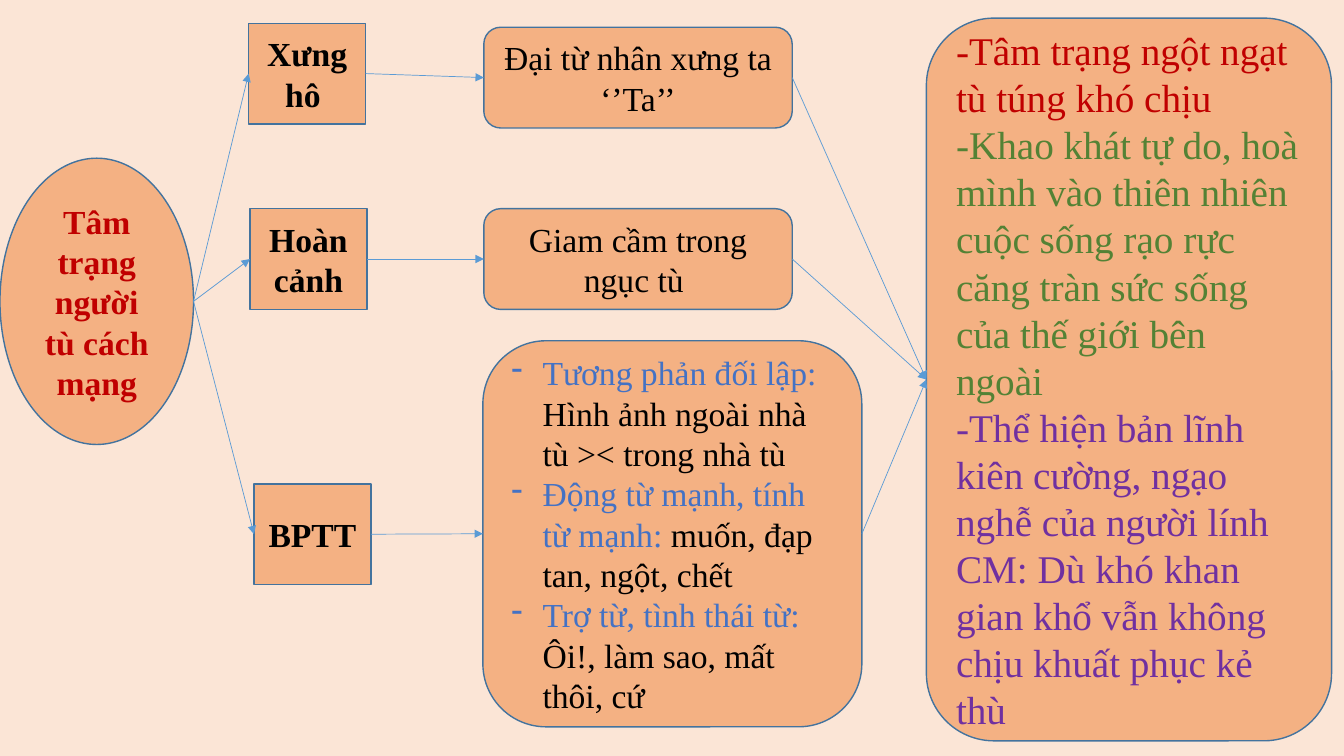
"""Build a mind-map slide on the feelings of an imprisoned revolutionary."""
from dataclasses import dataclass

from lxml.etree import SubElement
from pptx import Presentation
from pptx.dml.color import RGBColor
from pptx.enum.shapes import MSO_CONNECTOR, MSO_SHAPE
from pptx.enum.text import MSO_ANCHOR, PP_ALIGN
from pptx.oxml.ns import qn
from pptx.util import Inches, Pt

WIDTH, HEIGHT = Inches(13.33), Inches(7.5)
FONT = "Times New Roman"
INDENT = Inches(0.31)
COLORS = {
    "back": "FBE5D6", "box": "F4B183", "edge": "43739E", "arrow": "5B9BD5",
    "black": "000000", "red": "C00000", "blue": "4472C4",
    "green": "548235", "purple": "7030A0",
}

Run = tuple[str, str]


@dataclass(frozen=True)
class Node:
    """A filled box, placed in percent of the slide's width and height."""
    kind: MSO_SHAPE
    left: float
    top: float
    width: float
    height: float
    paragraphs: list[list[Run]]
    size: int = 24
    bold: bool = False
    centred: bool = True
    bullet: str = ""

    @property
    def middle(self) -> float:
        return self.top + self.height / 2

    @property
    def right(self) -> float:
        return self.left + self.width


def x(share: float) -> int:
    return round(WIDTH * share / 100)


def y(share: float) -> int:
    return round(HEIGHT * share / 100)


def rgb(name: str) -> RGBColor:
    return RGBColor.from_string(COLORS[name])


def label(left: float, top: float, text: str) -> Node:
    return Node(MSO_SHAPE.RECTANGLE, left, top, 8.7, 13.33,
                [[(text, "black")]], bold=True)


def detail(top: float, text: str) -> Node:
    return Node(MSO_SHAPE.ROUNDED_RECTANGLE, 36, top, 22.95, 13.33,
                [[(text, "black")]])


ROOT = Node(MSO_SHAPE.OVAL, 0, 20.93, 14.4, 37.87,
            [[("Tâm trạng người tù cách mạng", "red")]], bold=True)
LABELS = [
    label(18.5, 3.07, "Xưng hô "),
    label(18.6, 27.6, "Hoàn cảnh"),
    label(18.9, 64, "BPTT"),
]
DETAILS = [
    detail(3.6, "Đại từ nhân xưng ta ‘’Ta’’"),
    detail(27.6, "Giam cầm trong ngục tù "),
    Node(MSO_SHAPE.ROUNDED_RECTANGLE, 35.93, 45.07, 28.2, 51.07, [
        [("Tương phản đối lập: ", "blue"),
         ("Hình ảnh ngoài nhà tù >< trong nhà tù", "black")],
        [("Động từ mạnh, tính từ mạnh: ", "blue"),
         ("muốn, đạp tan, ngột, chết", "black")],
        [("Trợ từ, tình thái từ: ", "blue"),
         ("Ôi!, làm sao, mất thôi, cứ", "black")],
    ], centred=False, bullet="-"),
]
RESULT = Node(MSO_SHAPE.ROUNDED_RECTANGLE, 68.93, 2.4, 30.15, 95.6, [
    [("-Tâm trạng ngột ngạt tù túng khó chịu", "red")],
    [("-Khao khát tự do, hoà mình vào thiên nhiên cuộc sống rạo rực "
      "căng tràn sức sống của thế giới bên ngoài", "green")],
    [("-Thể hiện bản lĩnh kiên cường, ngạo nghễ của người lính CM: "
      "Dù khó khan gian khổ vẫn không chịu khuất phục kẻ thù", "purple")],
], size=28, centred=False)


def add_bullet(p, mark: str) -> None:
    pPr = p._p.get_or_add_pPr()
    pPr.set("marL", str(INDENT))
    pPr.set("indent", str(-INDENT))
    SubElement(pPr, qn("a:buChar")).set("char", mark)


def draw_node(shapes, node: Node) -> None:
    sp = shapes.add_shape(node.kind, x(node.left), y(node.top),
                          x(node.width), y(node.height))
    sp.shadow.inherit = False
    sp.fill.solid()
    sp.fill.fore_color.rgb = rgb("box")
    sp.line.color.rgb = rgb("edge")
    sp.line.width = Pt(1)
    tf = sp.text_frame
    for key, value in {"word_wrap": True,
                       "vertical_anchor": MSO_ANCHOR.MIDDLE}.items():
        setattr(tf, key, value)
    font_format = {"name": FONT, "size": Pt(node.size), "bold": node.bold}
    for i, runs in enumerate(node.paragraphs):
        p = tf.add_paragraph() if i else tf.paragraphs[0]
        p.alignment = PP_ALIGN.CENTER if node.centred else PP_ALIGN.LEFT
        if node.bullet:
            add_bullet(p, node.bullet)
        for text, color in runs:
            r = p.add_run()
            r.text = text
            r.font.color.rgb = rgb(color)
            for key, value in font_format.items():
                setattr(r.font, key, value)


def draw_arrow(shapes, start: Node, end: Node) -> None:
    line = shapes.add_connector(MSO_CONNECTOR.STRAIGHT,
                                x(start.right), y(start.middle),
                                x(end.left), y(end.middle))
    line.line.color.rgb = rgb("arrow")
    line.line.width = Pt(0.5)
    SubElement(line.line._get_or_add_ln(), qn("a:tailEnd")).set("type", "triangle")
    SubElement(line._element.spPr, qn("a:effectLst"))


def main() -> None:
    prs = Presentation()
    prs.slide_width, prs.slide_height = WIDTH, HEIGHT
    s = prs.slides.add_slide(prs.slide_layouts[6])
    s.background.fill.solid()
    s.background.fill.fore_color.rgb = rgb("back")
    for node in [ROOT, *LABELS, *DETAILS, RESULT]:
        draw_node(s.shapes, node)
    arrows = [(ROOT, node) for node in LABELS]
    arrows += zip(LABELS, DETAILS)
    arrows += [(node, RESULT) for node in DETAILS]
    for start, end in arrows:
        draw_arrow(s.shapes, start, end)
    prs.save("out.pptx")


if __name__ == "__main__":
    main()
